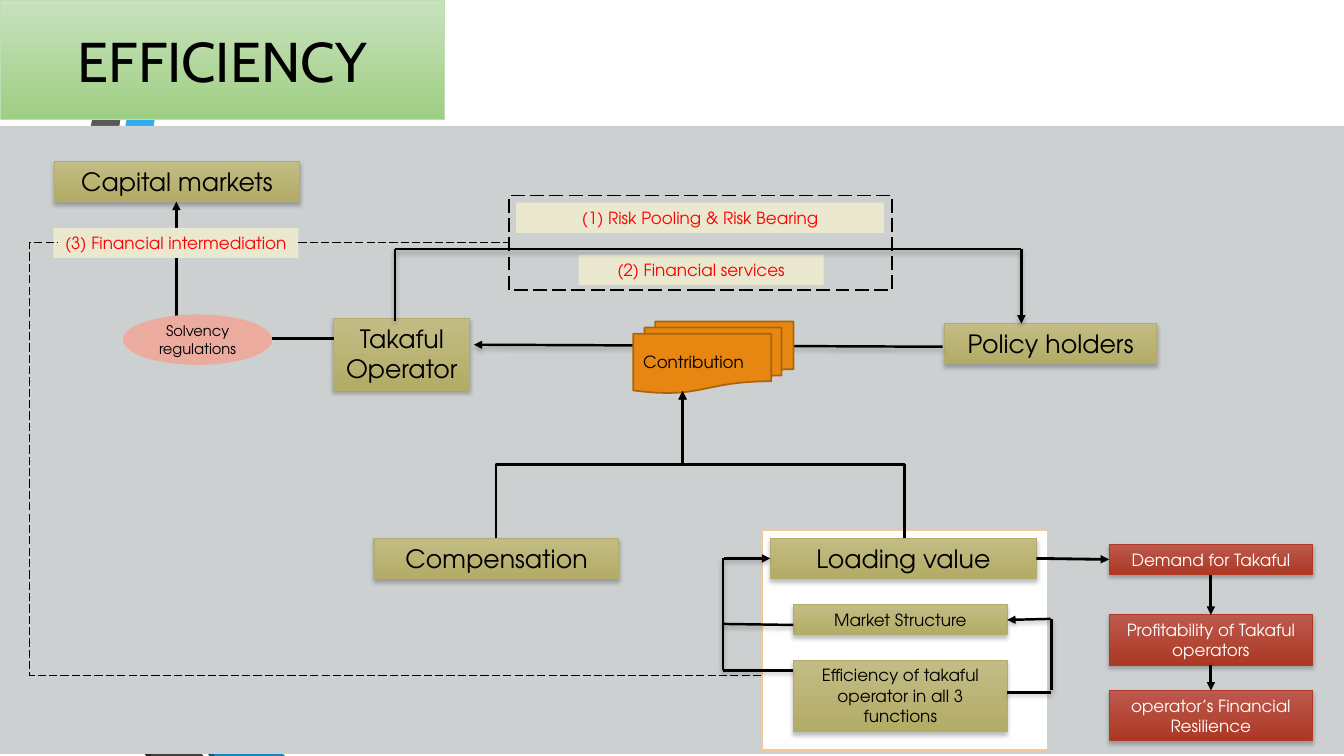
from pptx import Presentation
from pptx import util as u
from pptx.dml.color import RGBColor
from pptx.enum import dml, shapes, text
from pptx.oxml import ns, xmlchemy

PX = 9144  # 100 px to the inch

BLACK = RGBColor(0x00, 0x00, 0x00)
WHITE = RGBColor(0xFF, 0xFF, 0xFF)
RED = RGBColor(0xFF, 0x00, 0x00)
GREY = RGBColor(0xCD, 0xD0, 0xD1)
CREAM = RGBColor(0xEA, 0xE8, 0xCF)
PINK = RGBColor(0xEB, 0xAB, 0x9F)
ORANGE = RGBColor(0xE7, 0x87, 0x12)
ORANGE_LINE = RGBColor(0xAB, 0x64, 0x0D)
PEACH = RGBColor(0xF7, 0xC9, 0x92)
GREENS = (RGBColor(0xC9, 0xE2, 0xBE), RGBColor(0x9E, 0xCE, 0x83))
GREEN_LINE = RGBColor(0xC0, 0xDE, 0xB3)
OLIVES = (RGBColor(0xC3, 0xBC, 0x85), RGBColor(0xB3, 0xAC, 0x66))
OLIVE_LINE = RGBColor(0xB3, 0xAC, 0x6E)
BRICKS = (RGBColor(0xBD, 0x59, 0x4E), RGBColor(0xAB, 0x38, 0x23))
BRICK_LINE = RGBColor(0xAF, 0x39, 0x24)

BODY_FONT = "TeX Gyre Adventor"
RECTANGLE = shapes.MSO_SHAPE.RECTANGLE

RIBBONS = [
    (RGBColor(0x30, 0xAC, 0xEC), [(50, 578), (77, 583), (173, 0), (145, 0)]),
    (RGBColor(0x59, 0x59, 0x59), [(139, 0), (111, 0), (16, 573), (44, 577)]),
    (RGBColor(0x26, 0x26, 0x26), [(16, 573), (145, 750), (151, 750)]),
    (RGBColor(0x0C, 0x5A, 0x82), [(50, 579), (208, 750), (214, 750)]),
    (RGBColor(0x12, 0x87, 0xC3), [(50, 579), (214, 750), (283, 750), (77, 583), (50, 578)]),
    (RGBColor(0x40, 0x40, 0x40), [(202, 750), (48, 583), (44, 577), (16, 573), (151, 750)]),
]


def emu(*lengths):
    return [u.Emu(length * PX) for length in lengths]


def add_child(parent, tag, **attributes):
    child = xmlchemy.OxmlElement(tag)
    for name, value in attributes.items():
        child.set(name, str(value))
    parent.append(child)
    return child


def add_shadow(effects):
    shadow = add_child(effects, "a:outerShdw", blurRad=38100, dist=25400, dir=5400000,
                       algn="ctr", rotWithShape=0)
    add_child(add_child(shadow, "a:srgbClr", val="000000"), "a:alpha", val=25000)


def paint(shape, fill=None, line=None, width=0.75):
    """Fill with one colour, a pair of gradient colours, or nothing."""
    shape.shadow.inherit = False
    if fill is None:
        shape.fill.background()
    elif isinstance(fill, RGBColor):
        shape.fill.solid()
        shape.fill.fore_color.rgb = fill
    else:
        shape.fill.gradient()
        shape.fill.gradient_angle = 270
        for stop, color in zip(shape.fill.gradient_stops, fill):
            stop.color.rgb = color
    if line is None:
        shape.line.fill.background()
    else:
        shape.line.color.rgb = line
        shape.line.width = u.Pt(width)


def add_ribbon(slide, color, points):
    builder = slide.shapes.build_freeform(*points[0], scale=PX)
    builder.add_line_segments(points[1:], close=True)
    paint(builder.convert_to_shape(), color)


def add_box(slide, box, fill=None, line=None, width=0.75, kind=RECTANGLE):
    shape = slide.shapes.add_shape(kind, *emu(*box))
    paint(shape, fill, line, width)
    return shape


def write(shape, words, size, color=BLACK, font=BODY_FONT,
          align=text.PP_ALIGN.CENTER, anchor=text.MSO_ANCHOR.MIDDLE):
    frame = shape.text_frame
    frame.word_wrap = True
    frame.vertical_anchor = anchor
    frame.text = words
    paragraph = frame.paragraphs[0]
    paragraph.alignment = align
    paragraph.font.name = font
    paragraph.font.size = u.Pt(size)
    paragraph.font.color.rgb = color


def add_card(slide, words, box, size=18, fill=OLIVES, line=OLIVE_LINE, color=BLACK):
    card = add_box(slide, box, fill, line)
    add_shadow(card._element.spPr.find(ns.qn("a:effectLst")))
    write(card, words, size, color, anchor=text.MSO_ANCHOR.TOP)
    return card


def add_outcome(slide, words, box):
    return add_card(slide, words, box, 12, BRICKS, BRICK_LINE, WHITE)


def add_function_label(slide, words, box):
    label = add_box(slide, box, CREAM)
    write(label, words, 12, RED, anchor=text.MSO_ANCHOR.TOP)
    return label


def add_line(slide, start, end, width=1.75, arrow=False, shadow=False, dashed=False,
             kind=shapes.MSO_CONNECTOR.STRAIGHT, begin_at=None, end_at=None):
    line = slide.shapes.add_connector(kind, *emu(*start, *end))
    line.line.color.rgb = BLACK
    line.line.width = u.Pt(width)
    if dashed:
        line.line.dash_style = dml.MSO_LINE.LONG_DASH
    if arrow:
        add_child(line.line._get_or_add_ln(), "a:tailEnd", type="triangle")
    effects = add_child(line._element.spPr, "a:effectLst")
    if shadow:
        add_shadow(effects)
    if begin_at:
        line.begin_connect(*begin_at)
    if end_at:
        line.end_connect(*end_at)
    return line


def add_elbow(slide, start, end, width=2, arrow=True, dashed=False, bend=None, preset="bentConnector3"):
    elbow = add_line(slide, start, end, width, arrow, dashed=dashed, kind=shapes.MSO_CONNECTOR.ELBOW)
    geometry = elbow._element.spPr.find(ns.qn("a:prstGeom"))
    geometry.set("prst", preset)
    if bend:
        guides = geometry.find(ns.qn("a:avLst"))
        add_child(guides, "a:gd", name="adj1", fmla=f"val {bend}")
    return elbow


def add_rising_elbow(slide, start, end):
    """An elbow that leaves upwards: a sideways one turned by 270 degrees."""
    elbow = add_elbow(slide, start, end)
    across, rise = abs(end[0] - start[0]), start[1] - end[1]
    middle_x, middle_y = (start[0] + end[0]) / 2, (start[1] + end[1]) / 2
    elbow.left, elbow.top, elbow.width, elbow.height = emu(
        middle_x - rise / 2, middle_y - across / 2, rise, across)
    transform = elbow._element.spPr.find(ns.qn("a:xfrm"))
    transform.set("rot", "16200000")
    transform.set("flipH", "0")
    transform.set("flipV", "1" if end[0] < start[0] else "0")


def main():
    presentation = Presentation()
    presentation.slide_width, presentation.slide_height = emu(1333, 750)
    slide = presentation.slides.add_slide(presentation.slide_layouts[6])

    # Ribbons, title and panels
    for color, points in RIBBONS:
        add_ribbon(slide, color, points)
    title = add_box(slide, (0, 0, 441, 119), GREENS, GREEN_LINE, kind=shapes.MSO_SHAPE.PENTAGON)
    title.adjustments[0] = 0
    write(title, "EFFICIENCY", 40, font="Cabin")
    add_box(slide, (0, 125, 1333, 623), GREY)
    add_box(slide, (756, 526, 283, 218), WHITE, PEACH, 1.25)

    # Parties and parts of the contribution
    add_card(slide, "Capital markets", (54, 160, 243, 40))
    add_card(slide, "Takaful Operator", (331, 316, 135, 71))
    add_card(slide, "Efficiency of takaful operator in all 3 functions", (787, 655, 212, 71), 12)
    add_card(slide, "Policy holders", (937, 321, 210, 40))
    loading = add_card(slide, "Loading value", (764, 534, 264, 40))
    market = add_card(slide, "Market Structure", (787, 600, 212, 30), 12)
    add_card(slide, "Compensation", (371, 534, 243, 40))

    # Services between operator and policy holders
    add_function_label(slide, "(1) Risk Pooling & Risk Bearing", (512, 201, 365, 30))
    add_function_label(slide, "(2) Financial services", (574, 253, 243, 30))
    services = add_box(slide, (505, 194, 380, 94), None, BLACK, 1.25)
    services.line.dash_style = dml.MSO_LINE.LONG_DASH
    add_line(slide, (392, 318), (392, 247), shadow=True)
    add_line(slide, (392, 247), (1013, 247), shadow=True)
    add_line(slide, (1013, 247), (1013, 321), arrow=True, shadow=True)

    # Contribution
    add_line(slide, (935, 344), (470, 342), arrow=True, shadow=True)
    contribution = add_box(slide, (628, 319, 159, 71), ORANGE, ORANGE_LINE, 1.25,
                           shapes.MSO_SHAPE.FLOWCHART_MULTIDOCUMENT)
    write(contribution, "Contribution", 12, align=text.PP_ALIGN.LEFT)
    add_rising_elbow(slide, (492, 534), (677, 388))
    add_rising_elbow(slide, (897, 534), (677, 388))

    # Financial intermediation
    add_elbow(slide, (331, 336), (175, 200), preset="bentConnector2")
    solvency = add_box(slide, (122, 312, 148, 50), PINK, kind=shapes.MSO_SHAPE.OVAL)
    write(solvency, "Solvency regulations", 10.5)
    intermediation = add_function_label(slide, "(3) Financial intermediation", (53, 226, 243, 30))
    add_elbow(slide, (755, 670), (57, 241), 0.75, arrow=False, dashed=True, bend=104000)
    add_line(slide, (296, 241), (505, 241), 0.75, dashed=True,
             begin_at=(intermediation, 3), end_at=(services, 1))

    # Feedback around the loading value
    for start, end in [((787, 665), (717, 665)), ((787, 620), (717, 619)), ((717, 665), (717, 554)),
                       ((1043, 685), (1043, 614)), ((1042, 687), (999, 687))]:
        add_line(slide, start, end, shadow=True)
    add_line(slide, (718, 554), (764, 554), arrow=True, shadow=True, end_at=(loading, 1))
    add_line(slide, (1042, 614), (999, 614), arrow=True, shadow=True, end_at=(market, 3))

    # Outcomes
    demand = add_outcome(slide, "Demand for Takaful", (1100, 540, 202, 30))
    profit = add_outcome(slide, "Profitability of Takaful operators", (1100, 610, 202, 50))
    resilience = add_outcome(slide, "operator’s Financial Resilience", (1100, 685, 202, 50))
    add_line(slide, (1028, 554), (1100, 555), 2, arrow=True, begin_at=(loading, 3), end_at=(demand, 1))
    add_line(slide, (1201, 570), (1201, 610), 2, arrow=True, begin_at=(demand, 2), end_at=(profit, 0))
    add_line(slide, (1201, 660), (1201, 685), 2, arrow=True, begin_at=(profit, 2), end_at=(resilience, 0))

    presentation.save("out.pptx")


if __name__ == "__main__":
    main()
